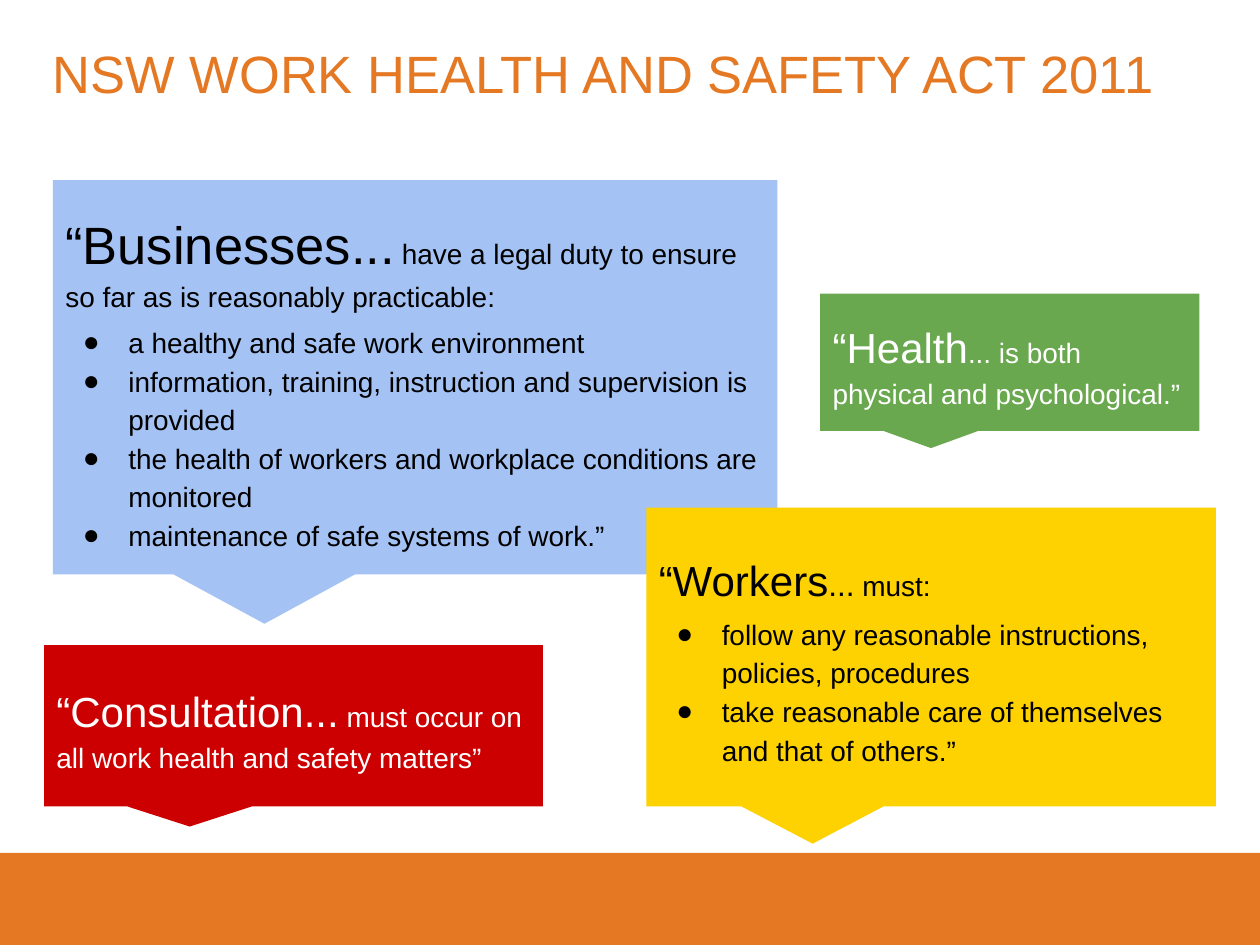
from lxml import etree
from pptx import Presentation
from pptx import util as u
from pptx.dml.color import RGBColor
from pptx.enum import shapes, text
from pptx.oxml.ns import qn

Inches, Pt = u.Inches, u.Pt

ORANGE = RGBColor(0xE4, 0x78, 0x23)
BLUE = RGBColor(0xA4, 0xC2, 0xF4)
GREEN = RGBColor(0x6A, 0xA8, 0x4F)
YELLOW = RGBColor(0xFE, 0xD1, 0x00)
RED = RGBColor(0xCC, 0x00, 0x00)
BLACK = RGBColor(0, 0, 0)
WHITE = RGBColor(0xFF, 0xFF, 0xFF)
FONT = "Arial"
BODY_SIZE = 16

# Each callout: box, fill, font colour, lead spans (text, size), bullets
CALLOUTS = [
    ((0.42, 1.43, 5.75, 3.13), BLUE, BLACK,
     [("“Businesses...", 30), (" ", 14),
      ("have a legal duty to ensure so far as is reasonably practicable:", BODY_SIZE)],
     ["a healthy and safe work environment",
      "information, training, instruction and supervision is provided",
      "the health of workers and workplace conditions are monitored",
      "maintenance of safe systems of work.”"]),
    ((6.51, 2.33, 3.01, 1.09), GREEN, WHITE,
     [("“Health", 24), ("... is both physical and psychological.”", BODY_SIZE)], []),
    ((5.13, 4.03, 4.52, 2.37), YELLOW, BLACK,
     [("“Workers", 24), ("...", 18), (" must:", BODY_SIZE)],
     ["follow any reasonable instructions, policies, procedures",
      "take reasonable care of themselves and that of others.”"]),
    ((0.35, 5.12, 3.96, 1.28), RED, WHITE,
     [("“Consultation...", 24),
      (" must occur on all work health and safety matters”", BODY_SIZE)], []),
]


def add_filled_shape(page, kind, box, color):
    shape = page.shapes.add_shape(kind, *map(Inches, box))
    shape.shadow.inherit = False
    shape.fill.solid()
    shape.fill.fore_color.rgb = color
    shape.line.fill.background()
    return shape


def set_margins(frame, margin):
    frame.margin_left = frame.margin_right = Inches(margin)
    frame.margin_top = frame.margin_bottom = Inches(margin)


def format_font(font, size, color):
    font.name = FONT
    font.size = Pt(size)
    font.color.rgb = color


def add_bullet(para, color):
    properties = para._p.get_or_add_pPr()
    properties.set("marL", str(Inches(0.5)))
    properties.set("indent", str(Inches(-0.36)))
    bullet_color = etree.SubElement(properties, qn("a:buClr"))
    etree.SubElement(bullet_color, qn("a:srgbClr"), val=str(color))
    etree.SubElement(properties, qn("a:buFont"), typeface=FONT)
    etree.SubElement(properties, qn("a:buChar"), char="●")


def add_callout(page, box, fill, color, lead, bullets):
    shape = add_filled_shape(
        page, shapes.MSO_SHAPE.RECTANGULAR_CALLOUT, box, fill)
    shape.adjustments[0] = -0.208
    shape.adjustments[1] = 0.625
    frame = shape.text_frame
    frame.word_wrap = True
    frame.vertical_anchor = text.MSO_ANCHOR.MIDDLE
    set_margins(frame, 0.1)

    # Lead sentence with a large opening word
    para = frame.paragraphs[0]
    for words, size in lead:
        span = para.add_run()
        span.text = words
        format_font(span.font, size, color)
    if not bullets:
        para.space_after = Pt(10)

    # Bulleted duties
    for index, words in enumerate(bullets):
        para = frame.add_paragraph()
        para.text = words
        add_bullet(para, color)
        para.space_before = Pt(0 if index else 4)
        format_font(para.runs[0].font, BODY_SIZE, color)

    for para in frame.paragraphs:
        para.alignment = text.PP_ALIGN.LEFT
        para.line_spacing = 1.15


def place_title(page, box, words):
    title = page.shapes.title
    title.left, title.top, title.width, title.height = map(Inches, box)
    frame = title.text_frame
    frame.text = words
    frame.word_wrap = True
    frame.auto_size = text.MSO_AUTO_SIZE.NONE
    frame.vertical_anchor = text.MSO_ANCHOR.TOP
    set_margins(frame, 0)
    para = frame.paragraphs[0]
    para.alignment = text.PP_ALIGN.LEFT
    para.line_spacing = 0.8
    format_font(para.runs[0].font, 30, ORANGE)


def main():
    deck = Presentation()
    deck.slide_width, deck.slide_height = Inches(10), Inches(7.5)
    page = deck.slides.add_slide(deck.slide_layouts[5])

    # Footer band
    add_filled_shape(page, shapes.MSO_SHAPE.RECTANGLE, (0, 6.77, 10, 0.73), ORANGE)
    for callout in CALLOUTS:
        add_callout(page, *callout)
    place_title(page, (0.42, 0.42, 9.23, 0.73), "NSW WORK HEALTH AND SAFETY ACT 2011")
    deck.save("out.pptx")


if __name__ == "__main__":
    main()
